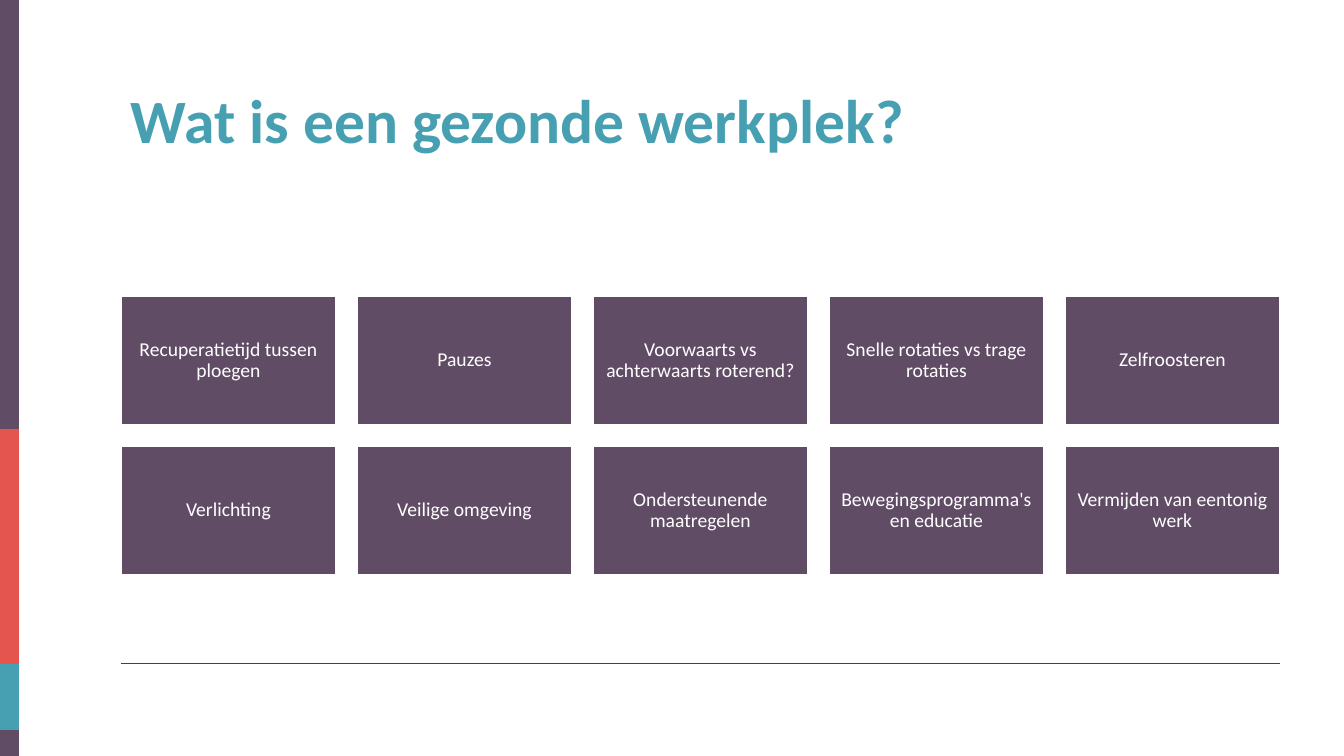
from pptx import Presentation, util as u
from pptx.dml.color import RGBColor
from pptx.enum import shapes, text
from pptx.oxml.xmlchemy import OxmlElement

TITLE = "Wat is een gezonde werkplek?"
CARDS = [
    ["Recuperatietijd tussen ploegen", "Pauzes",
     "Voorwaarts vs achterwaarts roterend?",
     "Snelle rotaties vs trage rotaties", "Zelfroosteren"],
    ["Verlichting", "Veilige omgeving", "Ondersteunende maatregelen",
     "Bewegingsprogramma's en educatie", "Vermijden van eentonig werk"],
]
PURPLE, RED, TEAL, WHITE, GREY = "614C66", "E5554F", "47A0B2", "FFFFFF", "454141"
FONT = "Calibri"

# Side bands: top, bottom, colour
BANDS = [(297, 675, RED), (0, 429, PURPLE), (664, 749, TEAL), (730, 756, PURPLE)]
BAND_W = 19
SLIDE_W, SLIDE_H = 1344, 756
LEFT, RIGHT = 121, 1280
TITLE_TOP, TITLE_H = 40, 167
RULE_Y = 664
CARD_TOP, CARD_W, CARD_H = 296, 215, 129
STEP_X, STEP_Y = 236, 150
CARD_INSET = 6


def px(n):
    return u.Emu(round(n * 914400 / 100.8))


def rgb(hex_colour):
    return RGBColor.from_string(hex_colour)


def add_rect(slide, x, y, w, h, fill, line=None):
    sp = slide.shapes.add_shape(shapes.MSO_SHAPE.RECTANGLE, px(x), px(y), px(w), px(h))
    sp.shadow.inherit = False
    sp.fill.solid()
    sp.fill.fore_color.rgb = rgb(fill)
    if line:
        sp.line.color.rgb = rgb(line)
        sp.line.width = u.Pt(1)
    else:
        sp.line.fill.background()
    return sp


def write(sp, words, size, colour, align, bold=False):
    tf = sp.text_frame
    tf.word_wrap = True
    tf.vertical_anchor = text.MSO_ANCHOR.MIDDLE
    p = tf.paragraphs[0]
    p.alignment = align
    p.line_spacing = 0.9
    r = p.add_run()
    r.text = words
    r.font.name, r.font.size, r.font.bold = FONT, u.Pt(size), bold
    r.font.color.rgb = rgb(colour)
    return tf


prs = Presentation()
prs.slide_width, prs.slide_height = px(SLIDE_W), px(SLIDE_H)
s = prs.slides.add_slide(prs.slide_layouts[6])

for top, bottom, colour in BANDS:
    add_rect(s, 0, top, BAND_W, bottom - top, colour)

rule = s.shapes.add_connector(shapes.MSO_CONNECTOR.STRAIGHT,
                              px(LEFT), px(RULE_Y), px(RIGHT), px(RULE_Y))
rule.line.color.rgb = rgb(GREY)
rule.line.width = u.Pt(0.75)
rule._element.spPr.append(OxmlElement("a:effectLst"))

title = s.shapes.add_textbox(px(LEFT), px(TITLE_TOP), px(RIGHT - LEFT), px(TITLE_H))
write(title, TITLE, 44, TEAL, text.PP_ALIGN.LEFT, bold=True)

for row, labels in enumerate(CARDS):
    for col, label in enumerate(labels):
        card = add_rect(s, LEFT + col * STEP_X, CARD_TOP + row * STEP_Y,
                        CARD_W, CARD_H, PURPLE, WHITE)
        tf = write(card, label, 14, WHITE, text.PP_ALIGN.CENTER)
        tf.margin_left = tf.margin_right = px(CARD_INSET)
        tf.margin_top = tf.margin_bottom = px(CARD_INSET)

prs.save("out.pptx")
